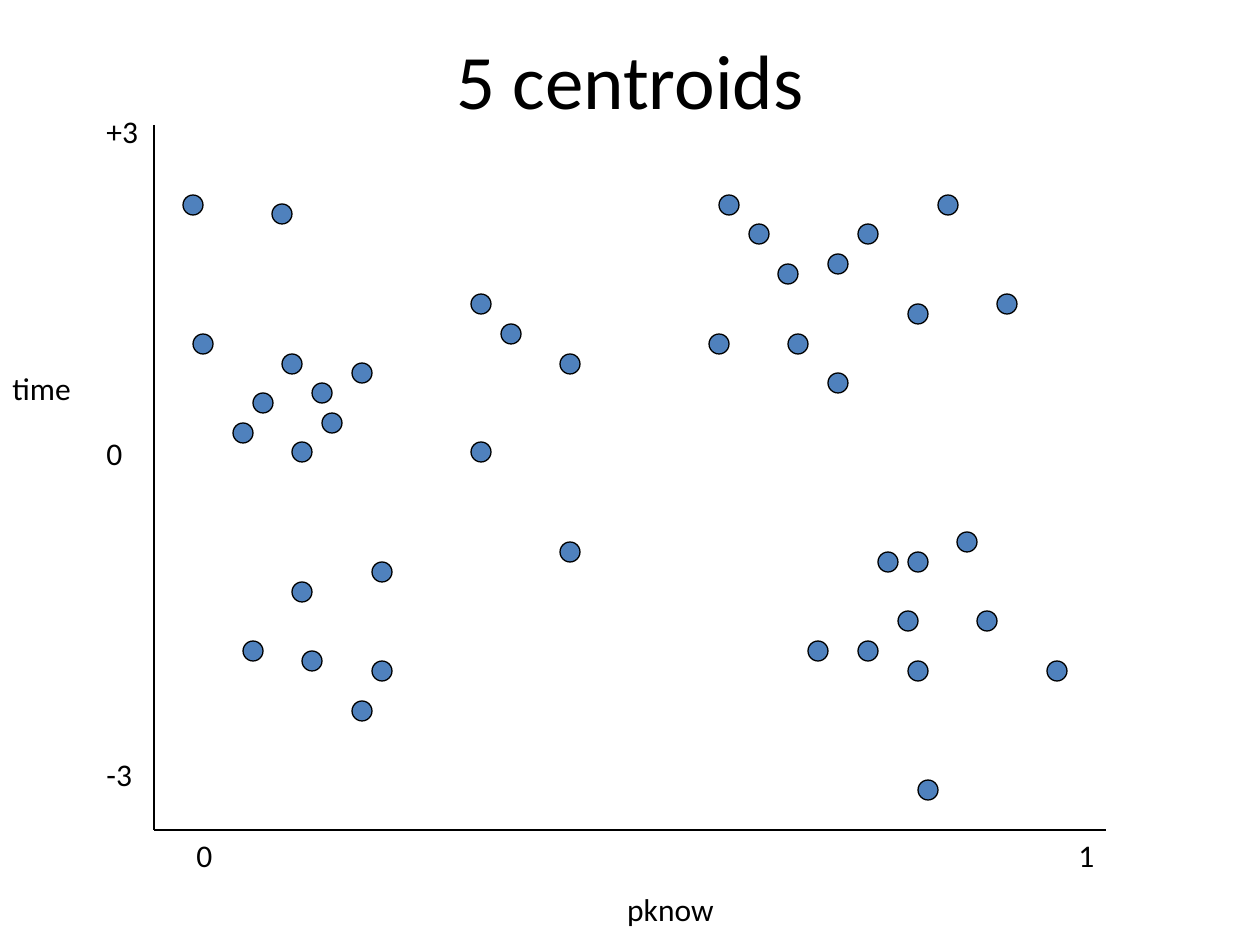
from lxml import etree
from pptx import Presentation
from pptx.dml.color import RGBColor
from pptx.enum.shapes import MSO_CONNECTOR, MSO_SHAPE
from pptx.enum.text import MSO_ANCHOR, PP_ALIGN
from pptx.oxml.ns import qn
from pptx.util import Emu, Pt

PX_PER_INCH = 126
SLIDE_SIZE = (1260, 945)
ORIGIN = (154, 830)
AXIS_TOP, AXIS_RIGHT = 125, 1106

# Centres of the dots, by cluster
CLUSTERS = {
    "upper left": [(193, 205), (282, 214), (203, 344), (292, 364), (362, 373),
                   (322, 393), (263, 403), (332, 423), (243, 433), (302, 452)],
    "lower left": [(382, 572), (302, 592), (253, 651), (312, 661), (382, 671),
                   (362, 711)],
    "middle": [(481, 304), (511, 334), (570, 364), (481, 452), (570, 552)],
    "upper right": [(729, 205), (948, 205), (759, 234), (868, 234), (838, 264),
                    (788, 274), (1007, 304), (918, 314), (719, 344), (798, 344),
                    (838, 383)],
    "lower right": [(967, 542), (888, 562), (918, 562), (908, 621), (987, 621),
                    (818, 651), (868, 651), (918, 671), (1057, 671), (928, 790)],
}


def px(length):
    return Emu(round(length * 914400 / PX_PER_INCH))


def color(hex_string):
    return RGBColor.from_string(hex_string)


def write_text(frame, text, size=18, font="Calibri", ink="000000", align=PP_ALIGN.LEFT):
    paragraph = frame.paragraphs[0]
    paragraph.alignment = align
    run = paragraph.add_run()
    run.text = text
    run.font.size = Pt(size)
    run.font.name = font
    run.font.color.rgb = color(ink)


class ScatterSlide:
    """Holds the slide and the style of its plot."""
    ink = "000000"
    dot_fill = "4F81BD"
    dot_size = 20
    line_width = Pt(0.75)

    def __init__(self, presentation):
        self.slide = presentation.slides.add_slide(presentation.slide_layouts[6])

    def label(self, text, left, top, width, height=50, anchor=MSO_ANCHOR.TOP, **text_format):
        box = self.slide.shapes.add_textbox(px(left), px(top), px(width), px(height))
        frame = box.text_frame
        frame.word_wrap = True
        frame.vertical_anchor = anchor
        write_text(frame, text, ink=self.ink, **text_format)

    def axis(self, start, end):
        line = self.slide.shapes.add_connector(
            MSO_CONNECTOR.STRAIGHT, *(px(value) for value in (*start, *end)))
        line.line.color.rgb = color(self.ink)
        line.line.width = self.line_width
        etree.SubElement(line._element.spPr, qn("a:effectLst"))

    def dot(self, x, y):
        """Draw a dot centred on x, y."""
        radius = self.dot_size / 2
        shape = self.slide.shapes.add_shape(
            MSO_SHAPE.OVAL, px(x - radius), px(y - radius),
            px(self.dot_size), px(self.dot_size))
        shape.shadow.inherit = False
        shape.fill.solid()
        shape.fill.fore_color.rgb = color(self.dot_fill)
        shape.line.color.rgb = color(self.ink)
        shape.line.width = self.line_width


def main():
    presentation = Presentation()
    presentation.slide_width, presentation.slide_height = map(px, SLIDE_SIZE)
    plot = ScatterSlide(presentation)

    plot.label("5 centroids", 63, 0, 1134, 158, anchor=MSO_ANCHOR.MIDDLE,
               size=44, align=PP_ALIGN.CENTER)

    plot.axis((ORIGIN[0], AXIS_TOP), ORIGIN)
    plot.axis(ORIGIN, (AXIS_RIGHT, ORIGIN[1]))

    for index, tick in enumerate(("+3", "0", "-3")):
        plot.label(tick, 94, 106 + 321.5 * index, 79)
    for index, tick in enumerate(("0", "1")):
        plot.label(tick, 184 + 882 * index, ORIGIN[1], 60)
    plot.label("time", 0, 363, 105)
    plot.label("pknow", 184, 884, 973, align=PP_ALIGN.CENTER)

    for centres in CLUSTERS.values():
        for x, y in centres:
            plot.dot(x, y)

    presentation.save("out.pptx")


if __name__ == "__main__":
    main()
